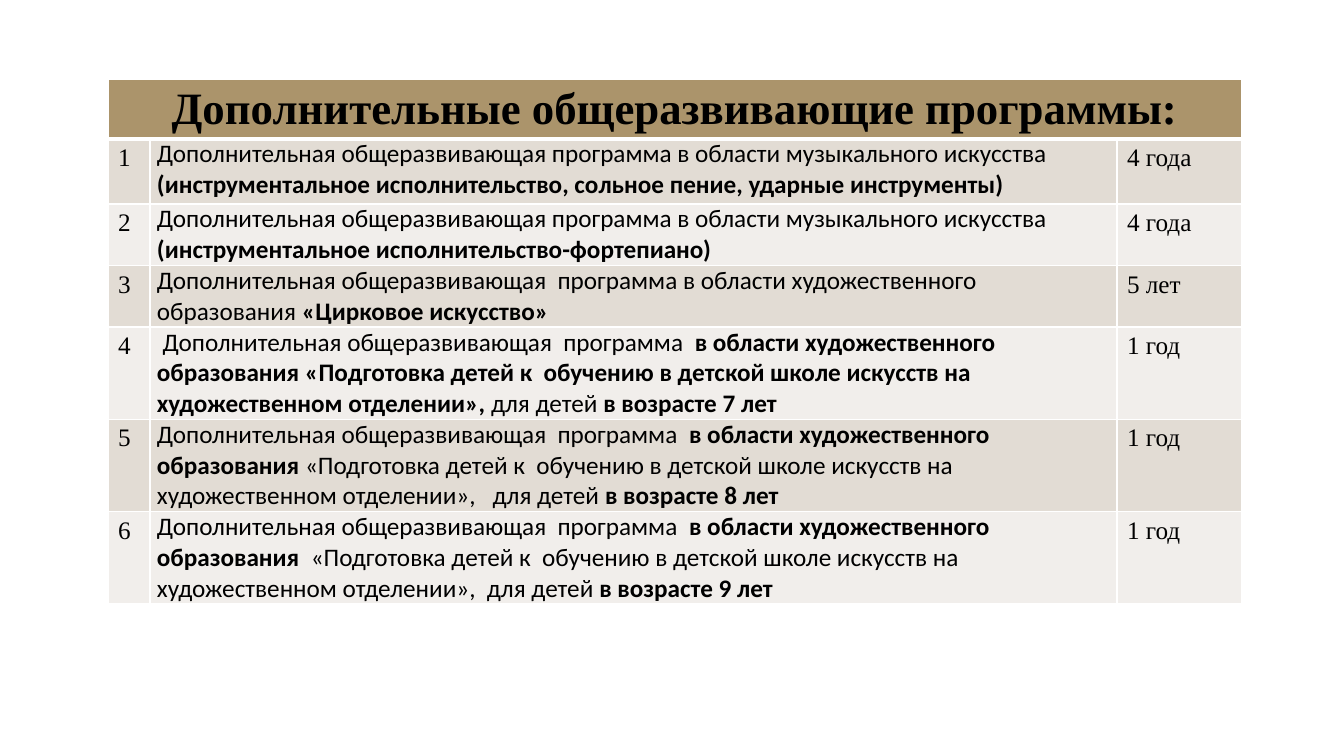
from lxml import etree
from pptx import Presentation
from pptx import util as u
from pptx.dml.color import RGBColor
from pptx.enum import text
from pptx.oxml import ns

PX = 914400 / 100.8
COLORS = {"header": "AB946B", "odd": "E2DCD4", "even": "F1EEEB",
          "border": "FFFFFF", "ink": "000000"}
SERIF, SANS = "Times New Roman", "Calibri"
TITLE = "Дополнительные общеразвивающие программы:"
MUSIC = "Дополнительная общеразвивающая программа в области музыкального искусства\n"
ART = "Дополнительная общеразвивающая  программа  *в области художественного "
TRAINING = "«Подготовка детей к  обучению в детской школе искусств на художественном отделении»,"

# Asterisks switch bold on and off; a line break starts a paragraph.
PROGRAMS = [
    (MUSIC + "*(инструментальное исполнительство, сольное пение, ударные инструменты)*", "4 года"),
    (MUSIC + "*(инструментальное исполнительство-фортепиано)*", "4 года"),
    ("Дополнительная общеразвивающая  программа в области художественного образования "
     "*«Цирковое искусство»*", "5 лет"),
    (" " + ART + "образования " + TRAINING + " *для детей *в возрасте 7 лет*", "1 год"),
    (ART + "образования *" + TRAINING + "   для детей *в возрасте 8 лет*", "1 год"),
    (ART + "образования  *" + TRAINING + "  для детей *в возрасте 9 лет*", "1 год"),
]
COLUMN_WIDTHS = [42, 967, 125]
ROW_HEIGHTS = [60, 65, 51, 51, 77, 77, 77]


def px(count):
    return u.Emu(round(count * PX))


def style_cell(cell, fill, top=1, bottom=1):
    """Give the cell its borders, in points, and its fill."""
    properties = cell._tc.get_or_add_tcPr()
    for side, points in (("L", 1), ("R", 1), ("T", top), ("B", bottom)):
        line = etree.SubElement(properties, ns.qn(f"a:ln{side}"), w=str(u.Pt(points)))
        solid = etree.SubElement(line, ns.qn("a:solidFill"))
        etree.SubElement(solid, ns.qn("a:srgbClr"), val=COLORS["border"])
    cell.fill.solid()
    cell.fill.fore_color.rgb = RGBColor.from_string(COLORS[fill])


def write(cell, content, font, size=18):
    frame = cell.text_frame
    for number, line in enumerate(content.split("\n")):
        para = frame.add_paragraph() if number else frame.paragraphs[0]
        for index, piece in enumerate(line.split("*")):
            if not piece:
                continue
            span = para.add_run()
            span.text = piece
            span.font.name = font
            span.font.size = u.Pt(size)
            span.font.bold = index % 2 == 1
            span.font.color.rgb = RGBColor.from_string(COLORS["ink"])


def fill_header(table):
    for column in range(len(COLUMN_WIDTHS)):
        style_cell(table.cell(0, column), "header", bottom=3)
    title = table.cell(0, 0)
    title.merge(table.cell(0, len(COLUMN_WIDTHS) - 1))
    write(title, f"*{TITLE}*", SERIF, 32)
    title.text_frame.paragraphs[0].alignment = text.PP_ALIGN.CENTER


def fill_program(table, row, name, duration):
    number_cell, name_cell, duration_cell = table.rows[row].cells
    for cell in (number_cell, name_cell, duration_cell):
        style_cell(cell, "odd" if row % 2 else "even", top=3 if row == 1 else 1)
    name_cell.margin_left = name_cell.margin_right = px(7)
    name_cell.margin_top = name_cell.margin_bottom = 0
    write(number_cell, str(row), SERIF)
    write(name_cell, name, SANS)
    write(duration_cell, duration, SERIF)


def add_program_table(page, left, top):
    table = page.shapes.add_table(
        len(ROW_HEIGHTS), len(COLUMN_WIDTHS), px(left), px(top),
        px(sum(COLUMN_WIDTHS)), px(sum(ROW_HEIGHTS))).table
    for column, width in zip(table.columns, COLUMN_WIDTHS):
        column.width = px(width)
    for row, height in zip(table.rows, ROW_HEIGHTS):
        row.height = px(height)
    fill_header(table)
    for row, (name, duration) in enumerate(PROGRAMS, 1):
        fill_program(table, row, name, duration)


def main():
    deck = Presentation()
    deck.slide_width, deck.slide_height = px(1344), px(756)
    page = deck.slides.add_slide(deck.slide_layouts[6])
    add_program_table(page, 108, 79)
    deck.save("out.pptx")


if __name__ == "__main__":
    main()
